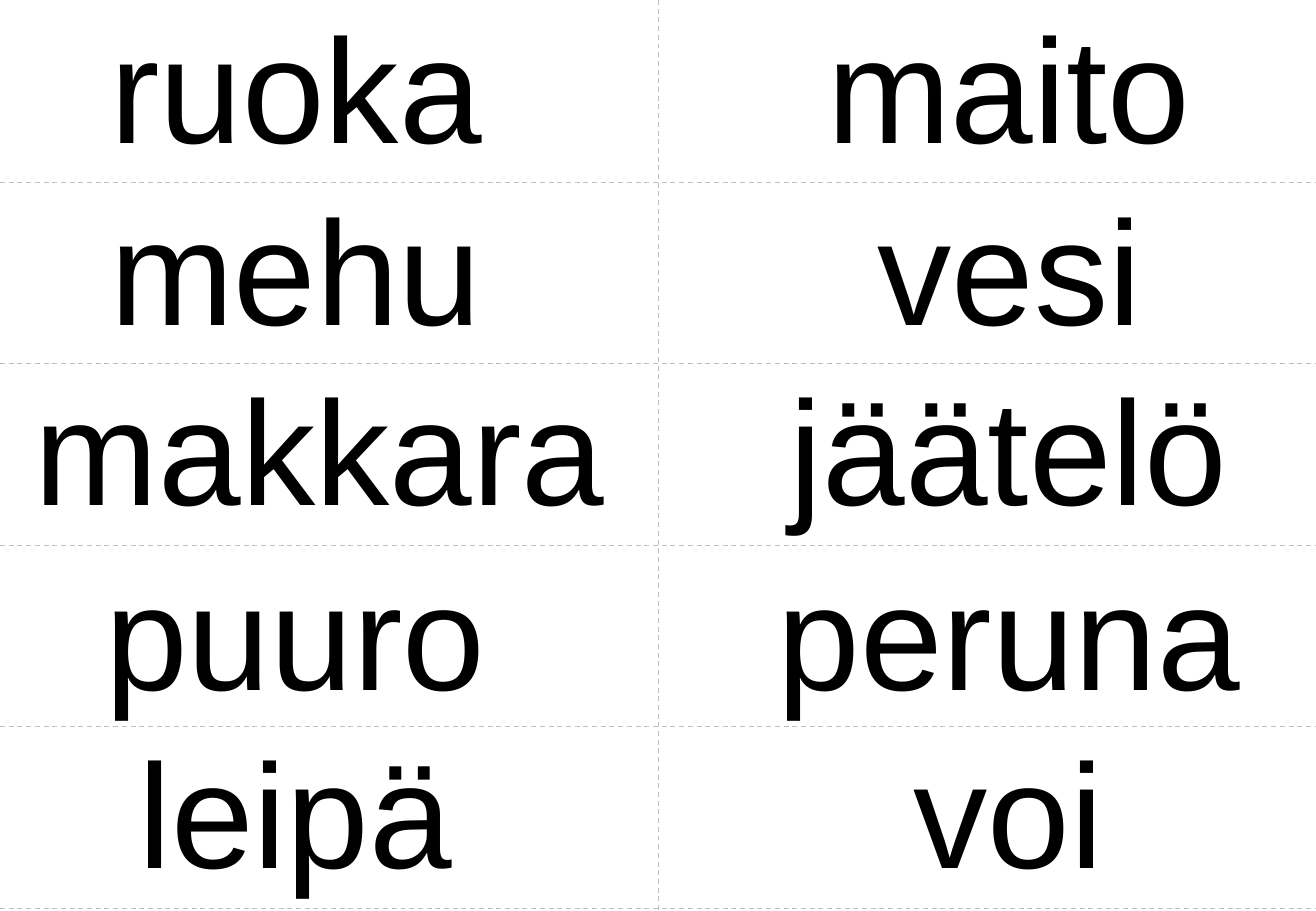
from lxml import etree
from pptx import Presentation
from pptx.dml.color import RGBColor
from pptx.enum.dml import MSO_LINE
from pptx.enum.shapes import MSO_CONNECTOR
from pptx.enum.text import MSO_AUTO_SIZE, PP_ALIGN
from pptx.oxml.ns import qn
from pptx.util import Emu, Pt

PX = 9144  # EMU in one px, 100 px to the inch
WIDTH, HEIGHT = 1083, 750
ROW_STEP = 149.6
WORD_HEIGHT = 148
INSET = 5
COLORS = {"text": "000000", "cut": "BFBFBF"}

ROW_TOPS = [-9, 141, 289, 441, 588]
# word, centre of its box, width of its box
LEFT_WORDS = [("ruoka", 243, 317), ("mehu", 243, 317), ("makkara", 263, 480),
              ("puuro", 243, 324), ("leipä", 243, 270)]
RIGHT_WORDS = [("maito", 830, 310), ("vesi", 830, 229), ("jäätelö", 830, 372),
               ("peruna", 830, 392), ("voi", 830, 168)]


def px(n):
    return Emu(n * PX)


def add_word(s, word, center, top, width):
    sp = s.shapes.add_textbox(px(center - width // 2), px(top), px(width), px(WORD_HEIGHT))
    tf = sp.text_frame
    tf.word_wrap = False
    tf.auto_size = MSO_AUTO_SIZE.SHAPE_TO_FIT_TEXT
    tf.margin_left = tf.margin_right = tf.margin_top = tf.margin_bottom = px(INSET)
    tf.text = word
    p = tf.paragraphs[0]
    p.alignment = PP_ALIGN.CENTER
    font = p.runs[0].font
    font.name = "Arial"
    font.size = Pt(88)
    font.color.rgb = RGBColor.from_string(COLORS["text"])


def add_cut_line(s, x1, y1, x2, y2):
    line = s.shapes.add_connector(MSO_CONNECTOR.STRAIGHT, px(x1), px(y1), px(x2), px(y2))
    line.line.color.rgb = RGBColor.from_string(COLORS["cut"])
    line.line.width = Pt(0.75)
    line.line.dash_style = MSO_LINE.DASH
    etree.SubElement(line._element.spPr, qn("a:effectLst"))


def main():
    prs = Presentation()
    prs.slide_width, prs.slide_height = px(WIDTH), px(HEIGHT)
    s = prs.slides.add_slide(prs.slide_layouts[6])

    for words in (LEFT_WORDS, RIGHT_WORDS):
        for (word, center, width), top in zip(words, ROW_TOPS):
            add_word(s, word, center, top, width)

    middle = round(WIDTH / 2)
    add_cut_line(s, middle, 0, middle, HEIGHT)
    for row in range(1, len(ROW_TOPS) + 1):
        y = round(row * ROW_STEP)
        add_cut_line(s, 0, y, WIDTH, y)

    prs.save("out.pptx")


if __name__ == "__main__":
    main()
